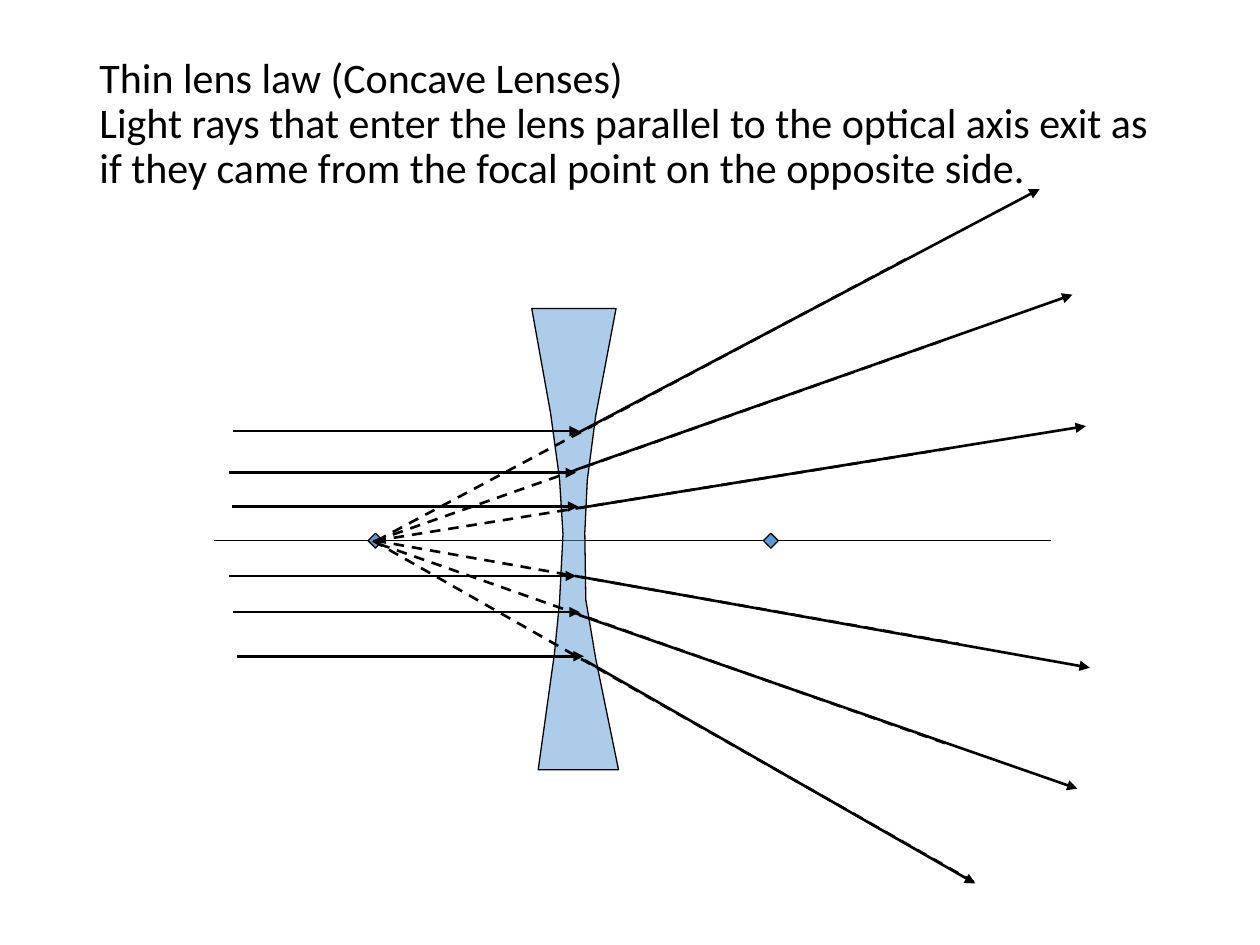
import pptx
import pptx.dml.color
import pptx.enum.dml
import pptx.enum.shapes
import pptx.enum.text
import pptx.oxml.ns
import pptx.util
from lxml import etree

Cm = pptx.util.Cm
Pt = pptx.util.Pt
BLACK = pptx.dml.color.RGBColor(0x00, 0x00, 0x00)
BLUE = pptx.dml.color.RGBColor(0x5B, 0x9B, 0xD5)

HEADING = [
    "Thin lens law (Concave Lenses)",
    "Light rays that enter the lens parallel to the optical axis exit as "
    "if they came from the focal point on the opposite side.",
]
AXIS_Y = 10.9
AXIS_ENDS = (4.32, 21.18)
FOCAL_POINTS = (7.57, 15.54)
FOCUS_SIZE = 0.3
LENS_OUTLINE = [
    (10.85, 15.52), (12.47, 15.52), (12.01, 13.28), (11.81, 12.09),
    (11.79, 10.74), (11.84, 9.68), (12.01, 8.38), (12.42, 6.22),
    (10.72, 6.22), (11.1, 8.33), (11.28, 9.65), (11.35, 10.77),
    (11.28, 12.14), (11.18, 13.16),
]
ENTRY_LENGTH = 6.99
# entry start, virtual start, virtual end, exit start, exit end
RAYS = [
    ((4.7, 8.69), (7.59, 10.9), (18.29, 5.21), (11.68, 8.71), (20.96, 3.81)),
    ((4.62, 9.53), (7.57, 10.9), (19.02, 6.86), (11.61, 9.47), (21.62, 5.94)),
    ((4.67, 10.21), (7.57, 10.9), (19.25, 9.02), (11.68, 10.24), (21.89, 8.59)),
    ((4.62, 11.61), (7.57, 10.9), (19.33, 12.98), (11.71, 11.63), (21.97, 13.46)),
    ((4.7, 12.34), (7.65, 10.97), (19.13, 15.01), (11.68, 12.4), (21.72, 15.9)),
    ((4.78, 13.23), (7.52, 10.9), (19.63, 17.78), (11.79, 13.31), (19.66, 17.81)),
]


def add_child(parent, tag, **attributes):
    return etree.SubElement(parent, pptx.oxml.ns.qn(tag), **attributes)


def draw_line(slide, start, end, width=1.5, dashed=False, arrow=False):
    line = slide.shapes.add_connector(
        pptx.enum.shapes.MSO_CONNECTOR.STRAIGHT,
        *(Cm(length) for length in start + end))
    line.line.color.rgb = BLACK
    line.line.width = Pt(width)
    if dashed:
        line.line.dash_style = pptx.enum.dml.MSO_LINE.DASH
    if arrow:
        add_child(line.line._get_or_add_ln(), "a:tailEnd", type="triangle")
    add_child(line._element.spPr, "a:effectLst")


def paint(shape):
    shape.shadow.inherit = False
    shape.fill.solid()
    shape.fill.fore_color.rgb = BLUE
    shape.line.color.rgb = BLACK
    shape.line.width = Pt(0.75)


def write_heading(slide):
    heading = slide.shapes.title
    heading.left, heading.top = Cm(1.75), Cm(1.02)
    heading.width, heading.height = Cm(21.9), Cm(3.68)
    frame = heading.text_frame
    frame.text = "\n".join(HEADING)
    frame.word_wrap = True
    frame.auto_size = pptx.enum.text.MSO_AUTO_SIZE.NONE
    frame.vertical_anchor = pptx.enum.text.MSO_ANCHOR.TOP
    for paragraph in frame.paragraphs:
        paragraph.alignment = pptx.enum.text.PP_ALIGN.LEFT
        paragraph.line_spacing = 0.9
        paragraph.space_before = Pt(0)
        for run in paragraph.runs:
            run.font.name = "Calibri"
            run.font.size = Pt(24)
            run.font.color.rgb = BLACK


def draw_lens(slide):
    outline = [(Cm(x), Cm(y)) for x, y in LENS_OUTLINE]
    builder = slide.shapes.build_freeform(*outline[0])
    builder.add_line_segments(outline[1:], close=True)
    lens = builder.convert_to_shape()
    paint(lens)
    color = lens._element.spPr.find(".//" + pptx.oxml.ns.qn("a:srgbClr"))
    add_child(color, "a:alpha", val="50000")


def draw_focal_points(slide):
    for x in FOCAL_POINTS:
        paint(slide.shapes.add_shape(
            pptx.enum.shapes.MSO_SHAPE.DIAMOND,
            Cm(x - FOCUS_SIZE / 2), Cm(AXIS_Y - FOCUS_SIZE / 2),
            Cm(FOCUS_SIZE), Cm(FOCUS_SIZE)))


def draw_rays(slide):
    for entry, virtual_start, virtual_end, exit_start, exit_end in RAYS:
        draw_line(slide, entry, (entry[0] + ENTRY_LENGTH, entry[1]), arrow=True)
        draw_line(slide, virtual_start, virtual_end, dashed=True)
        draw_line(slide, exit_start, exit_end, arrow=True)


def main():
    deck = pptx.Presentation()
    deck.slide_width, deck.slide_height = Cm(25.4), Cm(19.05)
    slide = deck.slides.add_slide(deck.slide_layouts[5])
    write_heading(slide)
    draw_line(slide, (AXIS_ENDS[0], AXIS_Y), (AXIS_ENDS[1], AXIS_Y), width=0.75)
    draw_lens(slide)
    draw_focal_points(slide)
    draw_rays(slide)
    deck.save("out.pptx")


if __name__ == "__main__":
    main()
